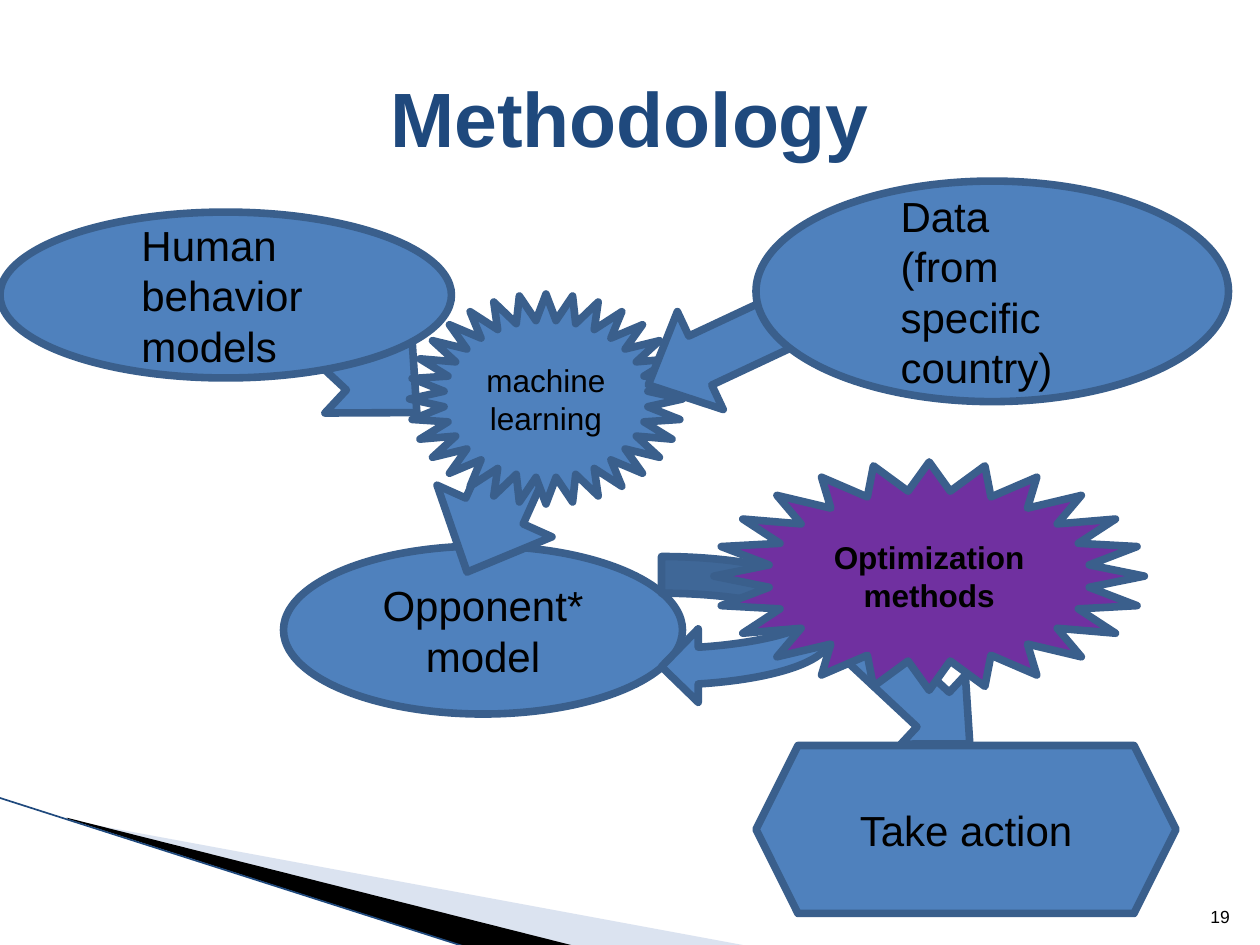
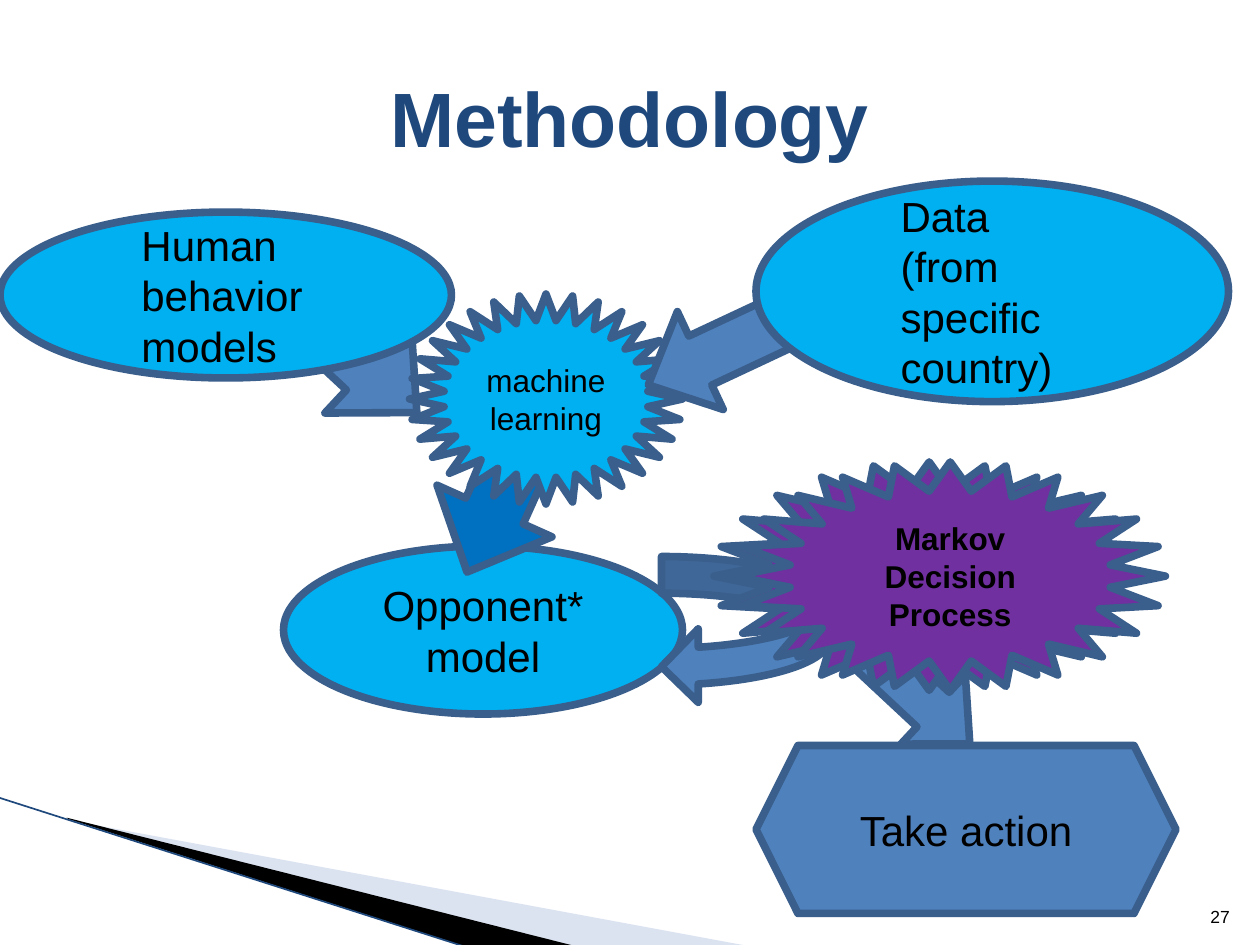
from lxml import etree
from pptx import Presentation
from pptx import util as u
from pptx.dml.color import RGBColor
from pptx.enum import shapes, text
from pptx.oxml.ns import qn

FONT = "Arial"
COLORS = {
    "title": "1F497D", "text": "000000", "outline": "3A5F8C",
    "blue": "4F81BD", "cyan": "00B0F0", "deep": "0070C0", "purple": "7030A0",
    "pale": "A7B9DB", "black": "000000", "stripe": "1F497D",
}
COLS, ROWS = 120, 90
CELL = u.Inches(10) // COLS
KIND = shapes.MSO_SHAPE
CENTER, LEFT, RIGHT = text.PP_ALIGN.CENTER, text.PP_ALIGN.LEFT, text.PP_ALIGN.RIGHT
MIDDLE, BOTTOM = text.MSO_ANCHOR.MIDDLE, text.MSO_ANCHOR.BOTTOM


def grid(*cells):
    """Turn grid columns and rows into lengths."""
    return [u.Emu(round(c * CELL)) for c in cells]


def rgb(name):
    return RGBColor.from_string(COLORS[name])


def write(sp, lines, size=24, color="text", bold=False, align=CENTER,
          anchor=MIDDLE, indent=0):
    tf = sp.text_frame
    tf.word_wrap = True
    tf.vertical_anchor = anchor
    for i, line in enumerate(lines.split("\n")):
        p = tf.paragraphs[0] if i == 0 else tf.add_paragraph()
        p.alignment = align
        if indent:
            p.level = 1
            p._p.get_or_add_pPr().set("marL", str(u.Inches(indent)))
            p._p.get_or_add_pPr().set("indent", "0")
        r = p.add_run()
        r.text = line
        r.font.name, r.font.size, r.font.bold = FONT, u.Pt(size), bold
        r.font.color.rgb = rgb(color)


def add_label(s, box, lines, **style):
    write(s.shapes.add_textbox(*grid(*box)), lines, **style)


def add_node(s, kind, box, fill="blue", lines=None, **style):
    sp = s.shapes.add_shape(kind, *grid(*box))
    sp.shadow.inherit = False
    sp.fill.solid()
    sp.fill.fore_color.rgb = rgb(fill)
    sp.line.color.rgb = rgb("outline")
    sp.line.width = u.Pt(4.33)
    if lines:
        write(sp, lines, **style)
    return sp


def add_block_arrow(s, box, rotation, fill="blue"):
    sp = add_node(s, KIND.DOWN_ARROW, box, fill)
    sp.adjustments[0], sp.adjustments[1] = 0.5, 0.531
    sp.rotation = rotation


def add_wedge(s, points, fill, alpha=100):
    corners = [tuple(u.Inches(v) for v in point) for point in points]
    builder = s.shapes.build_freeform(*corners[0])
    builder.add_line_segments(corners[1:], close=True)
    sp = builder.convert_to_shape()
    sp.shadow.inherit = False
    sp.fill.solid()
    sp.fill.fore_color.rgb = rgb(fill)
    sp.line.fill.background()
    if alpha < 100:
        color = sp._element.spPr.find(qn("a:solidFill"))[0]
        etree.SubElement(color, qn("a:alpha")).set("val", str(alpha * 1000))


def add_corner_stripes(s):
    add_wedge(s, [(0.55, 6.51), (5.95, 7.51), (4.56, 7.51), (0.55, 6.5)], "pale", 40)
    add_wedge(s, [(0.53, 6.49), (4.57, 7.51), (3.72, 7.52), (0.54, 6.5)], "black")
    ends = [u.Inches(v) for v in (-0.01, 6.33, 3.71, 7.52)]
    line = s.shapes.add_connector(shapes.MSO_CONNECTOR.STRAIGHT, *ends)
    line.line.color.rgb = rgb("stripe")
    line.line.width = u.Pt(0.95)
    etree.SubElement(line._element.spPr, qn("a:effectLst"))


def add_methodology(prs, number, node_fill, result_fill, method=None):
    """Draw the flow; a named method covers the general optimization star."""
    s = prs.slides.add_slide(prs.slide_layouts[6])
    add_corner_stripes(s)
    add_block_arrow(s, (82.2, 57.8, 9, 15.5), 313)
    add_block_arrow(s, (28.4, 27.1, 12, 14.5), 313)
    add_label(s, (6, 3.6, 108, 15), "Methodology", size=44, color="title", bold=True)
    add_node(s, KIND.OVAL, (27, 52, 38, 16), node_fill, "Opponent* model")
    add_node(s, KIND.OVAL, (0, 20.2, 43, 15.8), node_fill,
             "Human behavior models", align=LEFT, indent=0.5)
    add_block_arrow(s, (43.2, 32.5, 12, 23), 24.2, result_fill)
    add_node(s, KIND.HEXAGON, (72, 71, 40, 16), lines="Take action")
    add_label(s, (113.5, 84.1, 4.8, 4.8), number, size=10, align=RIGHT, anchor=BOTTOM)
    add_node(s, KIND.STAR_32_POINT, (39, 28, 26, 20), node_fill,
             "machine learning", size=18)
    add_node(s, KIND.CURVED_LEFT_ARROW, (63, 53, 16, 14))
    add_node(s, KIND.STAR_24_POINT, (68, 44, 41, 21.75), "purple",
             None if method else "Optimization\nmethods", size=18, bold=True)
    add_block_arrow(s, (64.2, 24.7, 10.3, 16.8), 64.9)
    add_node(s, KIND.OVAL, (72, 17.25, 45, 21), node_fill,
             "Data\n(from specific country)", align=LEFT, indent=0.5)
    if method:
        add_node(s, KIND.STAR_24_POINT, (70, 44, 41, 21.75), "purple",
                 method, size=18, bold=True)


def main():
    prs = Presentation()
    prs.slide_width, prs.slide_height = grid(COLS, ROWS)
    add_methodology(prs, "19", "blue", "blue")
    add_methodology(prs, "27", "cyan", "deep", "Markov Decision Process")
    prs.save("out.pptx")


if __name__ == "__main__":
    main()
